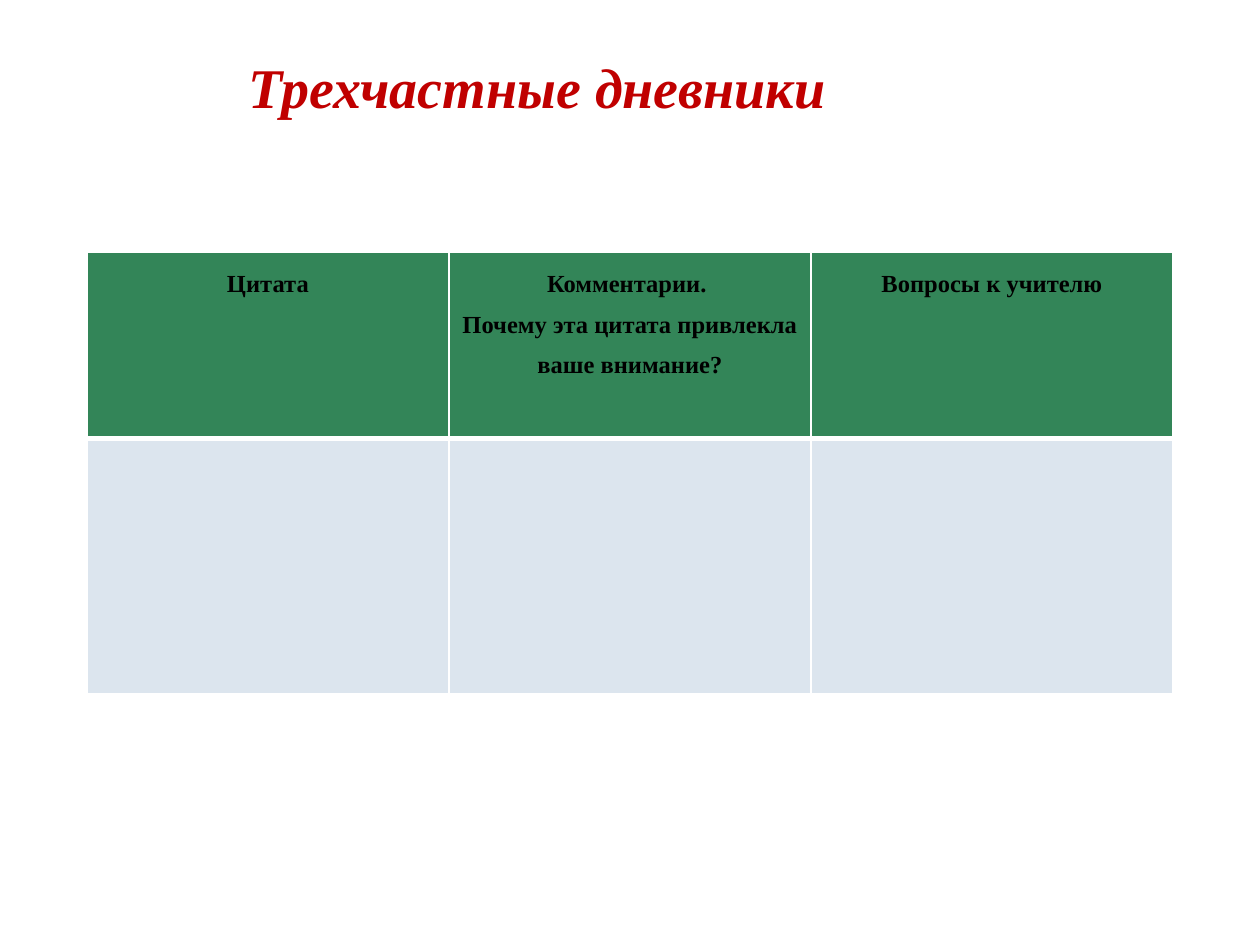
import pptx
import pptx.util
import pptx.dml.color
import pptx.enum.text
import pptx.oxml.ns
from lxml import etree
from pptx.util import Inches

FONT = "Times New Roman"
COLORS = {
    "title": "C00000",
    "text": "000000",
    "header": "338558",
    "body": "DCE5EE",
    "border": "FFFFFF",
}
HEADINGS = [
    "Цитата",
    "Комментарии. \nПочему эта цитата привлекла ваше внимание?",
    "Вопросы к учителю",
]
ROW_HEIGHTS = [1.48, 2.03]
TABLE_WIDTH = 8.62
HEADING_SIZE = 14


def rgb(name):
    return pptx.dml.color.RGBColor.from_string(COLORS[name])


def format_runs(paragraph, size, color, italic=False):
    for run in paragraph.runs:
        run.font.name = FONT
        run.font.size = pptx.util.Pt(size)
        run.font.bold = True
        run.font.italic = italic
        run.font.color.rgb = rgb(color)


def add_title(slide, text):
    title = slide.shapes.title
    title.left, title.top = Inches(1.87), Inches(-0.01)
    title.width, title.height = Inches(7.84), Inches(1.45)
    title.text_frame.text = text
    title.text_frame.vertical_anchor = pptx.enum.text.MSO_ANCHOR.MIDDLE
    paragraph = title.text_frame.paragraphs[0]
    paragraph.alignment = pptx.enum.text.PP_ALIGN.LEFT
    paragraph.line_spacing = 0.9
    format_runs(paragraph, 32, "title", italic=True)


def set_borders(cell, top, bottom):
    properties = cell._tc.get_or_add_tcPr()
    for side, width in {"L": 1, "R": 1, "T": top, "B": bottom}.items():
        line = etree.SubElement(properties, pptx.oxml.ns.qn(f"a:ln{side}"))
        line.set("w", str(pptx.util.Pt(width)))
        fill = etree.SubElement(line, pptx.oxml.ns.qn("a:solidFill"))
        color = etree.SubElement(fill, pptx.oxml.ns.qn("a:srgbClr"))
        color.set("val", COLORS["border"])


def fill_cell(cell, color):
    cell.fill.solid()
    cell.fill.fore_color.rgb = rgb(color)


def write_heading(cell, text):
    cell.margin_left = cell.margin_right = Inches(0.04)
    cell.margin_top = cell.margin_bottom = Inches(0.04)
    paragraph = cell.text_frame.paragraphs[0]
    paragraph.text = text
    paragraph.alignment = pptx.enum.text.PP_ALIGN.CENTER
    paragraph.line_spacing = 1.5
    format_runs(paragraph, HEADING_SIZE, "text")
    for line_break in paragraph._p.findall(pptx.oxml.ns.qn("a:br")):
        break_format = etree.SubElement(line_break, pptx.oxml.ns.qn("a:rPr"))
        break_format.set("sz", str(HEADING_SIZE * 100))


def add_diary_table(slide):
    diary = slide.shapes.add_table(
        len(ROW_HEIGHTS), len(HEADINGS), Inches(0.69), Inches(2),
        Inches(TABLE_WIDTH), Inches(sum(ROW_HEIGHTS)),
    ).table
    for row, height in zip(diary.rows, ROW_HEIGHTS):
        row.height = Inches(height)
    for column, heading in enumerate(HEADINGS):
        diary.columns[column].width = Inches(TABLE_WIDTH / len(HEADINGS))
        header, entry = diary.cell(0, column), diary.cell(1, column)
        set_borders(header, top=1, bottom=3)
        set_borders(entry, top=3, bottom=1)
        fill_cell(header, "header")
        fill_cell(entry, "body")
        write_heading(header, heading)


def main():
    presentation = pptx.Presentation()
    presentation.slide_width = Inches(10)
    presentation.slide_height = Inches(7.5)
    slide = presentation.slides.add_slide(presentation.slide_layouts[5])
    add_title(slide, "Трехчастные дневники")
    add_diary_table(slide)
    presentation.save("out.pptx")


if __name__ == "__main__":
    main()
